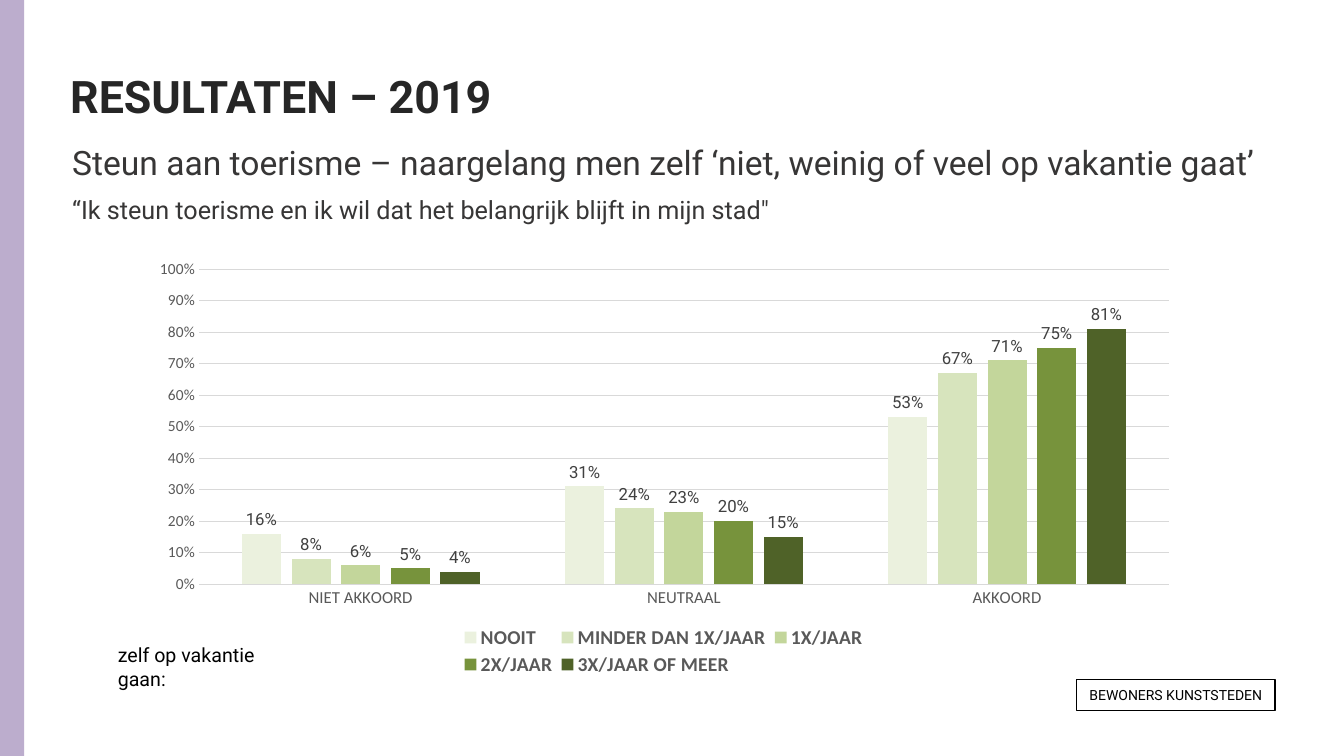
from collections import namedtuple

from lxml.etree import SubElement
from pptx import Presentation
from pptx.chart.data import CategoryChartData
from pptx.dml.color import RGBColor
from pptx.enum.chart import XL_CHART_TYPE as ChartType
from pptx.enum.chart import XL_LABEL_POSITION as LabelPosition
from pptx.enum.chart import XL_LEGEND_POSITION as LegendPosition
from pptx.enum.chart import XL_TICK_MARK as TickMark
from pptx.enum.shapes import MSO_SHAPE as Shape
from pptx.enum.text import MSO_ANCHOR as Anchor
from pptx.enum.text import PP_ALIGN as Align
from pptx.oxml import parse_xml
from pptx.oxml.ns import nsdecls, qn
from pptx.util import Cm, Pt

Box = namedtuple("Box", "left top width height")

CATEGORIES = ["NIET AKKOORD", "NEUTRAAL", "AKKOORD"]
SERIES = [
    ("NOOIT", "EBF1DE", (0.16, 0.31, 0.53)),
    ("MINDER DAN 1X/JAAR", "D7E4BD", (0.08, 0.24, 0.67)),
    ("1X/JAAR", "C3D69B", (0.06, 0.23, 0.71)),
    ("2X/JAAR", "77933C", (0.05, 0.20, 0.75)),
    ("3X/JAAR OF MEER", "4F6228", (0.04, 0.15, 0.81)),
]


def color(value):
    return RGBColor.from_string(value)


def set_font(font, size, value, name="Roboto", bold=False):
    font.name = name
    font.size = Pt(size)
    font.bold = bold
    font.color.rgb = color(value)


def place(box):
    return [Cm(length) for length in box]


def add_span(para, text, size, value, bold=False):
    span = para.add_run()
    span.text = text
    set_font(span.font, size, value, bold=bold)


def add_text(page, box, lines, value, anchor=Anchor.TOP, bold=False):
    frame = page.shapes.add_textbox(*place(box)).text_frame
    frame.word_wrap = True
    frame.vertical_anchor = anchor
    for index, (text, size) in enumerate(lines):
        para = frame.add_paragraph() if index else frame.paragraphs[0]
        para.space_before = Pt(1 if index else 0)
        para.space_after = Pt(8 if len(lines) > 1 else 0)
        add_span(para, text, size, value, bold)


def add_side_band(page, box):
    band = page.shapes.add_shape(Shape.RECTANGLE, *place(box))
    band.shadow.inherit = False
    band.line.fill.background()
    band.fill.solid()
    band.fill.fore_color.rgb = color("B3A2C7")
    tint = band.fill._xPr.find(".//" + qn("a:srgbClr"))
    SubElement(tint, qn("a:alpha"), val="88000")


def add_heading(page, box):
    title = Box(box.left, box.top, 24.13, 3.18)
    add_text(page, title, [("RESULTATEN – 2019", 32)], "262626", Anchor.MIDDLE, True)
    subtitle = Box(box.left + 0.05, box.top + 2.64, box.width, box.height - 2.64)
    add_text(page, subtitle, [
        ("Steun aan toerisme – naargelang men zelf ‘niet, weinig of veel op vakantie gaat’", 24),
        ("“Ik steun toerisme en ik wil dat het belangrijk blijft in mijn stad\"", 18),
    ], "373636")


def add_source_tag(page, box):
    tag = page.shapes.add_shape(Shape.RECTANGLE, *place(box))
    tag.shadow.inherit = False
    tag.fill.background()
    tag.line.color.rgb = color("000000")
    tag.line.width = Pt(1)
    frame = tag.text_frame
    frame.word_wrap = True
    frame.vertical_anchor = Anchor.MIDDLE
    frame.paragraphs[0].alignment = Align.CENTER
    add_span(frame.paragraphs[0], "BEWONERS KUNSTSTEDEN", 10, "000000")


def make_layout(x, y, width, height, inner=False):
    target = '<c:layoutTarget val="inner"/>' if inner else ""
    return parse_xml(
        f'<c:layout {nsdecls("c")}><c:manualLayout>{target}'
        '<c:xMode val="edge"/><c:yMode val="edge"/>'
        f'<c:x val="{x}"/><c:y val="{y}"/><c:w val="{width}"/><c:h val="{height}"/>'
        '</c:manualLayout></c:layout>')


def style_axes(chart):
    category, value = chart.category_axis, chart.value_axis
    for axis, size in ((category, 12), (value, 11)):
        axis.major_tick_mark = axis.minor_tick_mark = TickMark.NONE
        set_font(axis.tick_labels.font, size, "595959", "Calibri")
    value.minimum_scale, value.maximum_scale, value.major_unit = 0, 1, 0.1
    value.tick_labels.number_format = "0%"
    value.tick_labels.number_format_is_linked = False
    value.format.line.fill.background()
    value.has_major_gridlines = True
    for line in (category.format.line, value.major_gridlines.format.line):
        line.color.rgb = color("D9D9D9")
        line.width = Pt(0.75)


def style_series(series, value):
    series.format.fill.solid()
    series.format.fill.fore_color.rgb = color(value)
    series.invert_if_negative = False
    labels = series.data_labels
    labels.show_value = True
    labels.number_format = "0%"
    labels.number_format_is_linked = False
    labels.position = LabelPosition.OUTSIDE_END
    set_font(labels.font, 12, "404040")


def add_support_chart(page, box):
    data = CategoryChartData(number_format="0%")
    data.categories = CATEGORIES
    for name, _, values in SERIES:
        data.add_series(name, values)
    frame = page.shapes.add_chart(ChartType.COLUMN_CLUSTERED, *place(box), data)
    chart = frame.chart
    chart.has_title = False
    set_font(chart.font, 10, "000000", "Calibri")
    style_axes(chart)
    plot = chart.plots[0]
    plot.vary_by_categories = False
    plot.gap_width, plot.overlap = 219, -27
    for series, (_, value, _) in zip(plot.series, SERIES):
        style_series(series, value)
    chart.has_legend = True
    legend = chart.legend
    legend.position = LegendPosition.BOTTOM
    legend.include_in_layout = False
    set_font(legend.font, 14, "595959", "Calibri", True)
    area = chart._chartSpace.chart.plotArea
    for element in (area, legend._element):
        for layout in element.findall(qn("c:layout")):
            element.remove(layout)
    area.insert(0, make_layout(0.076, 0.06, 0.885, 0.722, True))
    legend._element.insert(1, make_layout(0.31, 0.87, 0.38, 0.13))
    note = Box(box.left - 0.2, box.top + 9.96, 4.9, 1.35)
    add_text(page, note, [("zelf op vakantie gaan:", 14)], "000000")


def build_results_slide(deck):
    page = deck.slides.add_slide(deck.slide_layouts[6])
    add_side_band(page, Box(0, 0, 0.61, 19.05))
    add_heading(page, Box(1.52, 0.81, 31.78, 6.02))
    add_source_tag(page, Box(27.13, 17.12, 5, 0.79))
    add_support_chart(page, Box(2.92, 6.12, 27.61, 11))


def main():
    deck = Presentation()
    deck.slide_width, deck.slide_height = Cm(33.87), Cm(19.05)
    build_results_slide(deck)
    deck.save("out.pptx")


if __name__ == "__main__":
    main()
